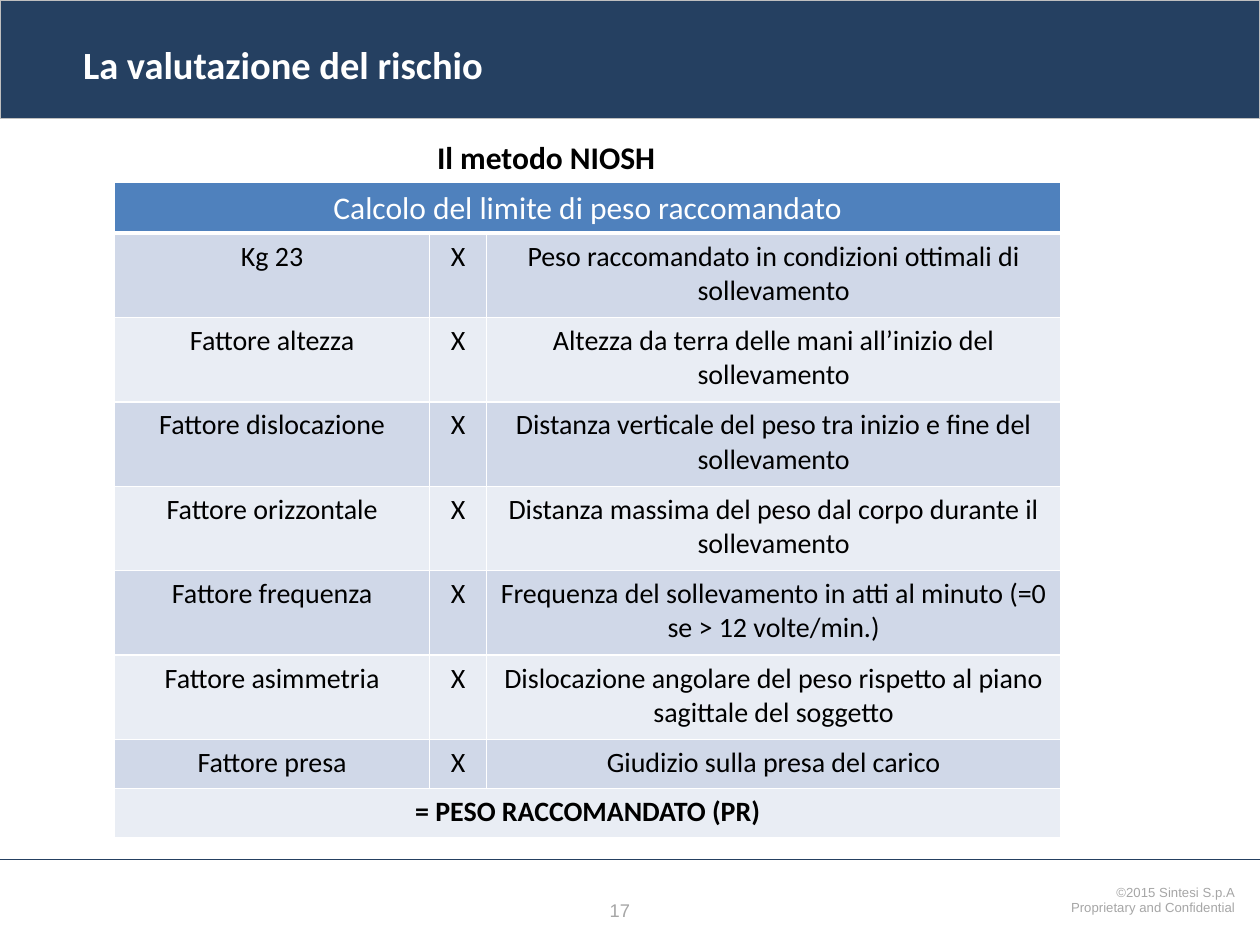
import pptx
import pptx.dml.color
import pptx.enum.shapes
import pptx.enum.text
import pptx.oxml
import pptx.oxml.ns
import pptx.util
from dataclasses import dataclass

Inches, Pt = pptx.util.Inches, pptx.util.Pt
PP_ALIGN = pptx.enum.text.PP_ALIGN
ANCHOR = pptx.enum.text.MSO_ANCHOR

TITLE = "La valutazione del rischio"
SUBTITLE = "Il metodo NIOSH"
TABLE_HEADING = "Calcolo del limite di peso raccomandato"
FACTORS = [
    ("Kg 23", "Peso raccomandato in condizioni ottimali di sollevamento"),
    ("Fattore altezza", "Altezza da terra delle mani all’inizio del sollevamento"),
    ("Fattore dislocazione", "Distanza verticale del peso tra inizio e fine del sollevamento"),
    ("Fattore orizzontale", "Distanza massima del peso dal corpo durante il sollevamento"),
    ("Fattore frequenza", "Frequenza del sollevamento in atti al minuto (=0 se > 12 volte/min.)"),
    ("Fattore asimmetria", "Dislocazione angolare del peso rispetto al piano sagittale del soggetto"),
    ("Fattore presa", "Giudizio sulla presa del carico"),
]
RESULT = "= PESO RACCOMANDATO (PR)"
PAGE_NUMBER = "17"
COPYRIGHT = ["©2015 Sintesi S.p.A", "Proprietary and Confidential"]

COLUMN_WIDTHS = [2.5, 0.45, 4.56]
ROW_HEIGHTS = [0.4] + [0.67] * 6 + [0.39] * 2


@dataclass(frozen=True)
class Theme:
    navy: str = "254061"
    header: str = "4F81BD"
    bands: tuple = ("D0D8E8", "E9EDF4")
    white: str = "FFFFFF"
    black: str = "000000"
    edge: str = "BFBFBF"
    grey: str = "A6A6A6"
    body_font: str = "Calibri"
    footer_font: str = "Arial"
    title_size: float = 22
    heading_size: float = 18
    cell_size: float = 16
    number_size: float = 10.5
    copyright_size: float = 7.5


THEME = Theme()


def rgb(value):
    return pptx.dml.color.RGBColor.from_string(value)


def add_run(p, text, size, color, font=THEME.body_font, bold=False):
    r = p.add_run()
    r.text = text
    r.font.size = Pt(size)
    r.font.name = font
    r.font.bold = bold
    r.font.color.rgb = rgb(color)


def add_text_box(s, box, lines, size, color, font=THEME.body_font, bold=False,
                 align=PP_ALIGN.LEFT, spacing=None, wrap=True):
    tf = s.shapes.add_textbox(*map(Inches, box)).text_frame
    tf.word_wrap = wrap
    for i, line in enumerate(lines):
        p = tf.paragraphs[0] if i == 0 else tf.add_paragraph()
        p.alignment = align
        p.line_spacing = spacing
        add_run(p, line, size, color, font, bold)


def add_header(s):
    band = s.shapes.add_shape(pptx.enum.shapes.MSO_SHAPE.RECTANGLE,
                              0, 0, Inches(10), Inches(0.94))
    band.shadow.inherit = False
    band.fill.solid()
    band.fill.fore_color.rgb = rgb(THEME.navy)
    band.line.color.rgb = rgb(THEME.edge)
    band.line.width = Pt(0.75)

    title = s.shapes.title
    title.left, title.top, title.width, title.height = map(Inches, (0.56, 0.19, 8.62, 0.64))
    band._element.addnext(title._element)  # title goes in front of the band
    tf = title.text_frame
    tf.vertical_anchor = ANCHOR.MIDDLE
    p = tf.paragraphs[0]
    p.alignment = PP_ALIGN.LEFT
    add_run(p, TITLE, THEME.title_size, THEME.white, bold=True)


def add_footer(s):
    rule = s.shapes.add_connector(pptx.enum.shapes.MSO_CONNECTOR.STRAIGHT,
                                  0, Inches(6.82), Inches(10), Inches(6.82))
    rule.line.color.rgb = rgb(THEME.navy)
    rule.line.width = Pt(0.5)
    rule._element.spPr.append(pptx.oxml.parse_xml(
        f'<a:effectLst {pptx.oxml.ns.nsdecls("a")}/>'))
    add_text_box(s, (4.74, 7.09, 0.52, 0.28), [PAGE_NUMBER],
                 THEME.number_size, THEME.grey, THEME.footer_font)
    add_text_box(s, (7.24, 6.98, 2.66, 0.34), COPYRIGHT,
                 THEME.copyright_size, THEME.grey, THEME.footer_font,
                 align=PP_ALIGN.RIGHT, spacing=0.95)


def set_borders(cell, bottom):
    for side, points in (("L", 1), ("R", 1), ("T", 1), ("B", bottom)):
        cell._tc.get_or_add_tcPr().append(pptx.oxml.parse_xml(
            f'<a:ln{side} {pptx.oxml.ns.nsdecls("a")} w="{Pt(points)}"><a:solidFill>'
            f'<a:srgbClr val="{THEME.white}"/></a:solidFill></a:ln{side}>'))


def add_factor_table(s):
    rows = [(TABLE_HEADING,), *((name, "X", text) for name, text in FACTORS), (RESULT,)]
    last = len(rows) - 1
    table = s.shapes.add_table(
        len(rows), len(COLUMN_WIDTHS), Inches(0.91), Inches(1.45),
        Inches(sum(COLUMN_WIDTHS)), Inches(sum(ROW_HEIGHTS))).table
    table.first_row = table.horz_banding = False
    for column, width in zip(table.columns, COLUMN_WIDTHS):
        column.width = Inches(width)

    for i, texts in enumerate(rows):
        table.rows[i].height = Inches(ROW_HEIGHTS[i])
        heading = i == 0
        for cell in table.rows[i].cells:
            set_borders(cell, bottom=3 if heading else 1)
            cell.fill.solid()
            cell.fill.fore_color.rgb = rgb(THEME.header if heading else THEME.bands[(i - 1) % 2])
        if len(texts) == 1:
            table.cell(i, 0).merge(table.cell(i, len(COLUMN_WIDTHS) - 1))
        for j, text in enumerate(texts):
            p = table.cell(i, j).text_frame.paragraphs[0]
            p.alignment = PP_ALIGN.CENTER
            add_run(p, text, THEME.heading_size if heading else THEME.cell_size,
                    THEME.white if heading else THEME.black, bold=i == last)


def main():
    prs = pptx.Presentation()
    prs.slide_width, prs.slide_height = Inches(10), Inches(7.5)
    s = prs.slides.add_slide(prs.slide_layouts.get_by_name("Title Only"))
    add_header(s)
    add_footer(s)
    add_factor_table(s)
    add_text_box(s, (3.37, 1.05, 1.95, 0.4), [SUBTITLE],
                 THEME.heading_size, THEME.black, bold=True, wrap=False)
    prs.save("out.pptx")


if __name__ == "__main__":
    main()
